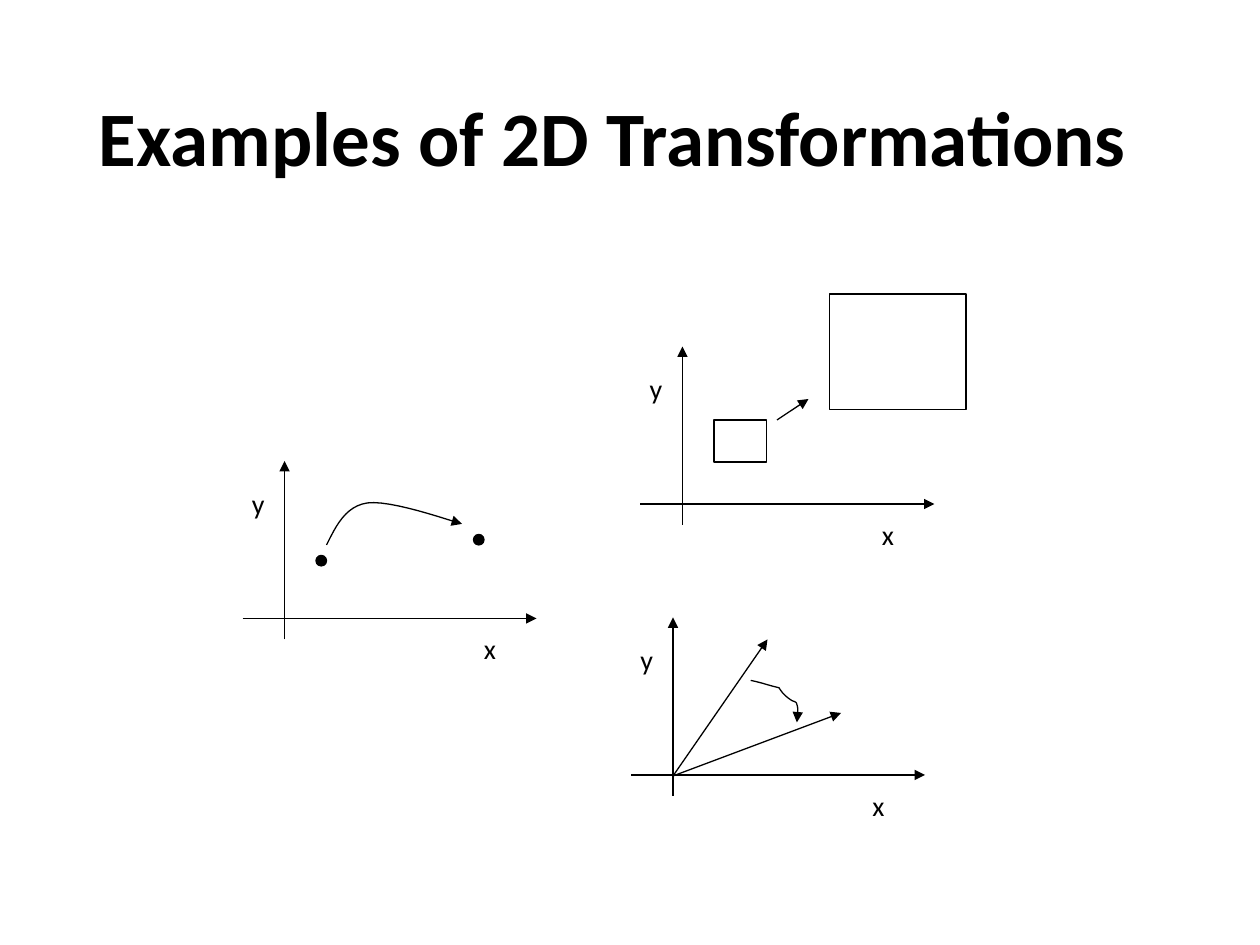
import pptx
import pptx.util
import pptx.dml.color
import pptx.enum.shapes
import pptx.enum.text
import pptx.oxml

BLACK = pptx.dml.color.RGBColor(0, 0, 0)
WHITE = pptx.dml.color.RGBColor(255, 255, 255)
COLS, ROWS = 120, 90
KINDS = pptx.enum.shapes.MSO_SHAPE
TEXT = pptx.enum.text
NS = 'xmlns:a="http://schemas.openxmlformats.org/drawingml/2006/main"'


class Deck:
    """Holds the style and current slide; points are grid cells from a movable origin."""

    font = {"name": "Calibri", "size": pptx.util.Pt(16), "bold": False}
    width = pptx.util.Pt(0.75)

    def __init__(self):
        self.show = pptx.Presentation()
        self.show.slide_width = pptx.util.Inches(10)
        self.show.slide_height = pptx.util.Inches(7.5)
        self.cell = self.show.slide_width // COLS
        self.slide = self.show.slides.add_slide(self.show.slide_layouts[6])
        fill = self.slide.background.fill
        fill.solid()
        fill.fore_color.rgb = WHITE
        self.base = (0, 0)

    def size(self, cells):
        return round(cells * self.cell)

    def spot(self, x, y):
        return self.size(self.base[0] + x), self.size(self.base[1] + y)

    def line(self, item, head=False):
        item.line.color.rgb = BLACK
        item.line.width = self.width
        if head:
            tip = pptx.oxml.parse_xml(f'<a:tailEnd {NS} type="triangle"/>')
            item.line._get_or_add_ln().append(tip)

    def text(self, words, x, y, w, h, frame, font=None, space=None):
        box = self.slide.shapes.add_textbox(*self.spot(x, y), self.size(w), self.size(h))
        body = box.text_frame
        for key, value in frame.items():
            setattr(body, key, value)
        par = body.paragraphs[0]
        par.line_spacing = space
        run = par.add_run()
        run.text = words
        for key, value in {**self.font, **(font or {})}.items():
            setattr(run.font, key, value)
        run.font.color.rgb = BLACK

    def label(self, words, x, y):
        self.text(words, x, y, 3.7, 4.4, {
            "word_wrap": False, "auto_size": TEXT.MSO_AUTO_SIZE.SHAPE_TO_FIT_TEXT})

    def arrow(self, start, end):
        item = self.slide.shapes.add_connector(
            pptx.enum.shapes.MSO_CONNECTOR.STRAIGHT, *self.spot(*start), *self.spot(*end))
        self.line(item, head=True)
        item._element.spPr.append(pptx.oxml.parse_xml(f"<a:effectLst {NS}/>"))

    def shape(self, kind, x, y, w, h, fill=None):
        item = self.slide.shapes.add_shape(
            kind, *self.spot(x, y), self.size(w), self.size(h))
        item.shadow.inherit = False
        if fill is None:
            item.fill.background()
        else:
            item.fill.solid()
            item.fill.fore_color.rgb = fill
        self.line(item)

    def dot(self, x, y):
        self.shape(KINDS.OVAL, x - 0.5, y - 0.5, 1, 1, BLACK)

    def curve(self, start, *parts, steps=12):
        """Draw joined cubic curves, each part two controls and an end."""
        dots, last = [], start
        for one, two, end in parts:
            for step in range(1, steps + 1):
                t = step / steps
                u = 1 - t
                dots.append(self.spot(*(
                    u**3 * a + 3 * u * u * t * b + 3 * u * t * t * c + t**3 * d
                    for a, b, c, d in zip(last, one, two, end))))
            last = end
        pen = self.slide.shapes.build_freeform(*self.spot(*start), scale=1.0)
        pen.add_line_segments(dots, close=False)
        item = pen.convert_to_shape()
        item.shadow.inherit = False
        item.fill.background()
        self.line(item, head=True)

    def axes(self, x, y):
        """Move the origin and draw a labelled pair of axes there."""
        self.base = (x, y)
        self.arrow((-4, 0), (24, 0))
        self.arrow((0, 2), (0, -15))
        self.label("x", 17.8, 0.7)
        self.label("y", -4.3, -13.2)


def main():
    deck = Deck()

    # Title
    deck.text("Examples of 2D Transformations", 8.25, 4.8, 103.5, 17.4,
              {"word_wrap": True, "vertical_anchor": TEXT.MSO_ANCHOR.MIDDLE},
              {"size": pptx.util.Pt(44), "bold": True}, 0.9)

    # Translation: a point moves
    deck.axes(27.1, 58.9)
    deck.dot(3.5, -5.5)
    deck.dot(18.5, -7.5)
    deck.curve((4, -7),
               ((4.9, -8.8), (5.8, -10.7), (7.9, -11)),
               ((10.1, -11.3), (15.5, -9.4), (16.9, -9)))

    # Scaling: a box grows
    deck.axes(65, 48)
    deck.shape(KINDS.RECTANGLE, 3, -8, 5, 4)
    deck.shape(KINDS.RECTANGLE, 14, -20, 13, 11)
    deck.arrow((9, -8), (12, -10))

    # Rotation: a ray turns
    deck.axes(64.1, 73.8)
    for end in ((9, -12.9), (16, -5.9)):
        deck.arrow((0, 0.1), end)
    deck.curve((7.4, -9),
               ((8.4, -8.8), (9.2, -8.5), (10.1, -8.3)),
               ((10.4, -7.8), (10.8, -7.4), (11.3, -7.1)),
               ((11.4, -7), (11.8, -7), (11.8, -6.7)),
               ((12, -6.2), (11.8, -5.6), (11.8, -5)))

    deck.show.save("out.pptx")


if __name__ == "__main__":
    main()
